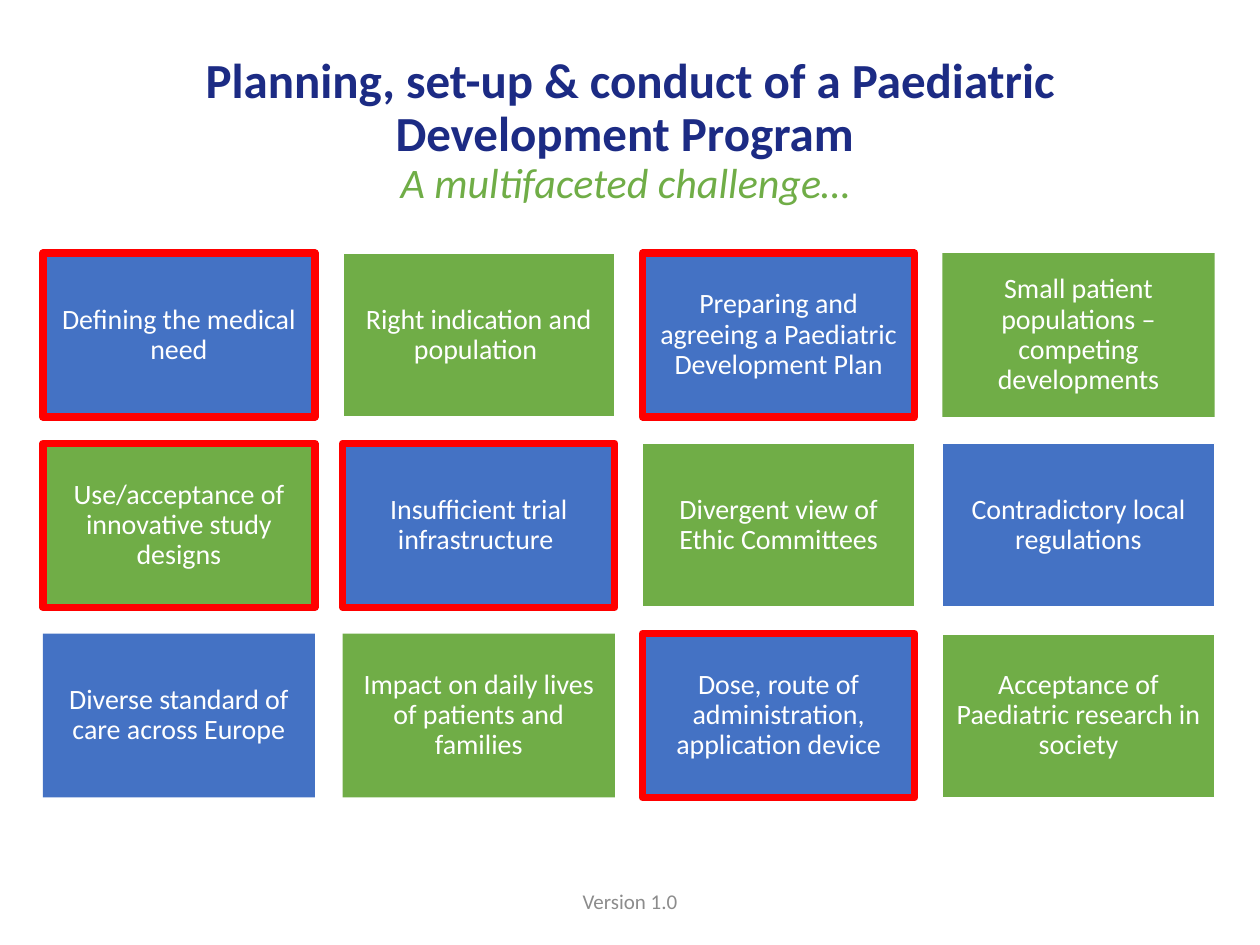
from dataclasses import dataclass
from typing import Optional

from pptx import Presentation
from pptx.dml.color import RGBColor
from pptx.enum import shapes, text
from pptx.util import Inches, Pt

NAVY = RGBColor(0x1C, 0x2B, 0x84)
BLUE = RGBColor(0x44, 0x72, 0xC4)
GREEN = RGBColor(0x70, 0xAD, 0x47)
RED = RGBColor(0xFF, 0x00, 0x00)
WHITE = RGBColor(0xFF, 0xFF, 0xFF)
GREY = RGBColor(0x8C, 0x8C, 0x8C)
FONT = "Calibri"

# Card grid
LEFT, TOP = 0.34, 2.01
WIDTH, HEIGHT = 2.16, 1.3
STEP_X, STEP_Y = 2.38, 1.51
COLS = 4


@dataclass(frozen=True)
class Edge:
    color: RGBColor
    width: float


MARK = Edge(RED, 4.25)
THIN = Edge(WHITE, 1)


@dataclass(frozen=True)
class Card:
    label: str
    edge: Optional[Edge] = None


CARDS = [
    Card("Defining the medical need", MARK),
    Card("Right indication and population ", THIN),
    Card("Preparing and agreeing a Paediatric Development Plan", MARK),
    Card("Small patient populations – competing developments"),
    Card("Use/acceptance of innovative study designs", MARK),
    Card("Insufficient trial infrastructure ", MARK),
    Card("Divergent view of Ethic Committees", THIN),
    Card("Contradictory local regulations", THIN),
    Card("Diverse standard of care across Europe"),
    Card("Impact on daily lives of patients and families"),
    Card("Dose, route of administration, application device", MARK),
    Card("Acceptance of Paediatric research in society", THIN),
]


def add_text(para, words: str, *, size: float, color: RGBColor,
             bold: bool = False, italic: bool = False,
             spacing: float = 0.9) -> None:
    para.alignment = text.PP_ALIGN.CENTER
    para.line_spacing = spacing
    run = para.add_run()
    run.text = words
    font = run.font
    font.name, font.size = FONT, Pt(size)
    font.bold, font.italic = bold, italic
    font.color.rgb = color


def add_box(slide, left: float, top: float, width: float, height: float,
            anchor: text.MSO_ANCHOR):
    box = slide.shapes.add_textbox(Inches(left), Inches(top),
                                   Inches(width), Inches(height))
    frame = box.text_frame
    frame.word_wrap = True
    frame.vertical_anchor = anchor
    return frame.paragraphs[0]


def add_card(slide, card: Card, row: int, col: int) -> None:
    shape = slide.shapes.add_shape(
        shapes.MSO_SHAPE.RECTANGLE,
        Inches(LEFT + col * STEP_X), Inches(TOP + row * STEP_Y),
        Inches(WIDTH), Inches(HEIGHT))
    shape.shadow.inherit = False
    shape.fill.solid()
    shape.fill.fore_color.rgb = GREEN if (row + col) % 2 else BLUE
    if card.edge:
        shape.line.color.rgb = card.edge.color
        shape.line.width = Pt(card.edge.width)
    else:
        shape.line.fill.background()
    frame = shape.text_frame
    frame.word_wrap = True
    frame.vertical_anchor = text.MSO_ANCHOR.MIDDLE
    frame.margin_left = frame.margin_right = Inches(0.07)
    frame.margin_top = frame.margin_bottom = Inches(0.07)
    add_text(frame.paragraphs[0], card.label, size=16, color=WHITE)


def main() -> None:
    deck = Presentation()
    deck.slide_width, deck.slide_height = Inches(10), Inches(7.5)
    slide = deck.slides.add_slide(deck.slide_layouts[6])

    # Title and subtitle
    title = add_box(slide, 0.69, 0.4, 8.62, 0.73, text.MSO_ANCHOR.TOP)
    add_text(title, "Planning, set-up & conduct of a Paediatric "
             "Development Program ", size=28, color=NAVY, bold=True)
    title.add_line_break()
    add_text(title, "A multifaceted challenge… ", size=24, color=GREEN,
             italic=True)

    # Challenge cards
    for i, card in enumerate(CARDS):
        add_card(slide, card, *divmod(i, COLS))

    # Footer
    foot = add_box(slide, 3.31, 6.95, 3.38, 0.4, text.MSO_ANCHOR.MIDDLE)
    add_text(foot, "Version 1.0", size=12, color=GREY, spacing=1.0)

    deck.save("out.pptx")


if __name__ == "__main__":
    main()
